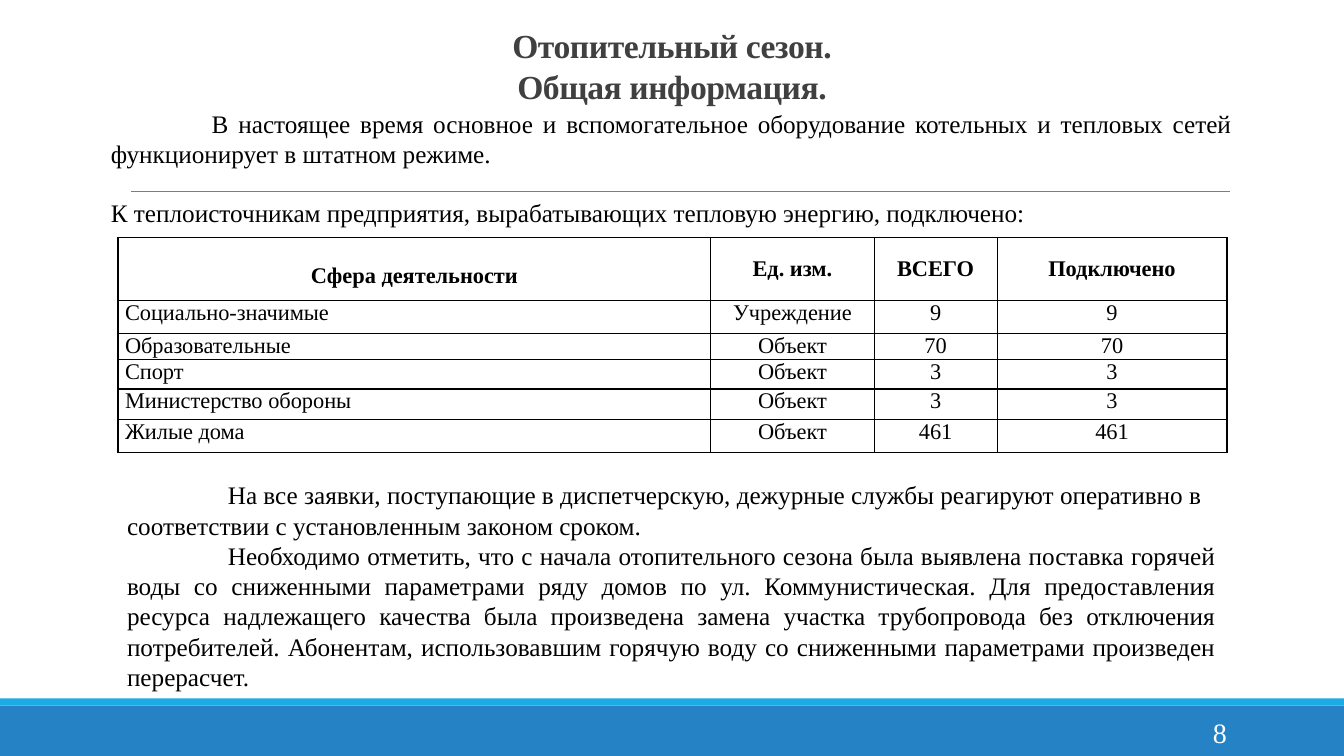
import dataclasses

import lxml.etree
import pptx
import pptx.dml.color
import pptx.enum.shapes
import pptx.enum.text
import pptx.oxml
import pptx.oxml.ns
import pptx.util

Inches = pptx.util.Inches
Pt = pptx.util.Pt
Align = pptx.enum.text.PP_ALIGN
Anchor = pptx.enum.text.MSO_ANCHOR

TITLE = "Отопительный сезон.\vОбщая информация."
PAGE_NUMBER = "8"

# Each paragraph: text, alignment, first-line indent in inches, space before in points
INTRODUCTION = [
    ("В настоящее время основное и вспомогательное оборудование котельных и тепловых сетей "
     "функционирует в штатном режиме.", Align.JUSTIFY, 1, 0),
    ("К теплоисточникам предприятия, вырабатывающих тепловую энергию, подключено:",
     Align.JUSTIFY, 0, 21),
]
CONCLUSION = [
    ("На все заявки, поступающие в диспетчерскую, дежурные службы реагируют оперативно в "
     "соответствии с установленным законом сроком.", Align.LEFT, 1, 0),
    ("Необходимо отметить, что с начала отопительного сезона была выявлена поставка горячей "
     "воды со сниженными параметрами ряду домов по ул. Коммунистическая. Для предоставления "
     "ресурса надлежащего качества была произведена замена участка трубопровода без отключения "
     "потребителей. Абонентам, использовавшим горячую воду со сниженными параметрами произведен "
     "перерасчет.", Align.JUSTIFY, 1, 0),
]

TABLE_ROWS = [
    ("Сфера деятельности", "Ед. изм.", "ВСЕГО", "Подключено"),
    ("Социально-значимые", "Учреждение", "9", "9"),
    ("Образовательные", "Объект", "70", "70"),
    ("Спорт", "Объект", "3", "3"),
    ("Министерство обороны", "Объект", "3", "3"),
    ("Жилые дома", "Объект", "461", "461"),
]
COLUMN_WIDTHS = (5.88, 1.62, 1.22, 2.28)
ROW_HEIGHTS = (0.62, 0.33, 0.26, 0.29, 0.3, 0.33)
TABLE_LEFT, TABLE_TOP = 1.17, 2.36

SLIDE_WIDTH, SLIDE_HEIGHT = 13.33, 7.5
FOOTER_TOP, STRIPE_TOP = 7, 6.93


@dataclasses.dataclass(frozen=True)
class Theme:
    font: str = "Times New Roman"
    title: str = "404040"
    text: str = "000000"
    light: str = "FFFFFF"
    footer: str = "2583C5"
    stripe: str = "1CACE3"
    rule: str = "7E7E7E"
    title_size: int = 24
    number_size: int = 20
    body_size: int = 18
    table_size: int = 16


THEME = Theme()


def rgb(value):
    return pptx.dml.color.RGBColor.from_string(value)


def apply_format(target, values):
    for name, value in values.items():
        setattr(target, name, value)


def format_font(font, size, color, bold=False):
    apply_format(font, {"name": THEME.font, "size": Pt(size), "bold": bold})
    font.color.rgb = rgb(color)


def place(shape, left, top, width, height):
    apply_format(shape, {"left": Inches(left), "top": Inches(top),
                         "width": Inches(width), "height": Inches(height)})


def format_frame(frame, left, top, right, bottom):
    apply_format(frame, {
        "margin_left": Inches(left), "margin_top": Inches(top),
        "margin_right": Inches(right), "margin_bottom": Inches(bottom),
        "word_wrap": True, "vertical_anchor": Anchor.TOP,
        "auto_size": pptx.enum.text.MSO_AUTO_SIZE.NONE})


def add_title(slide):
    title = slide.shapes.title
    place(title, 1, 0.15, 11.33, 0.91)
    format_frame(title.text_frame, 0, 0.1, 0, 0)
    title.text_frame.text = TITLE
    paragraph = title.text_frame.paragraphs[0]
    paragraph.alignment = Align.CENTER
    for run in paragraph.runs:
        format_font(run.font, THEME.title_size, THEME.title, bold=True)
        run.font._element.set("spc", "-30")


def fill_body(shape, paragraphs, box):
    place(shape, *box)
    frame = shape.text_frame
    format_frame(frame, 0.1, 0.05, 0.1, 0.05)
    for index, (text, alignment, indent, space_before) in enumerate(paragraphs):
        paragraph = frame.add_paragraph() if index else frame.paragraphs[0]
        run = paragraph.add_run()
        run.text = text
        format_font(run.font, THEME.body_size, THEME.text)
        apply_format(paragraph, {"alignment": alignment, "space_before": Pt(space_before)})
        properties = paragraph._p.get_or_add_pPr()
        properties.set("marL", "0")
        properties.set("indent", str(Inches(indent)))
        lxml.etree.SubElement(properties, pptx.oxml.ns.qn("a:buNone"))


def add_bar(slide, top, bottom, color):
    bar = slide.shapes.add_shape(
        pptx.enum.shapes.MSO_SHAPE.RECTANGLE, 0, Inches(top),
        Inches(SLIDE_WIDTH), Inches(bottom - top))
    bar.shadow.inherit = False
    bar.fill.solid()
    bar.fill.fore_color.rgb = rgb(color)
    bar.line.fill.background()


def add_rule(slide):
    rule = slide.shapes.add_connector(
        pptx.enum.shapes.MSO_CONNECTOR.STRAIGHT,
        Inches(1.3), Inches(1.9), Inches(12.2), Inches(1.9))
    rule.line.color.rgb = rgb(THEME.rule)
    rule.line.width = Pt(0.48)
    lxml.etree.SubElement(rule._element.spPr, pptx.oxml.ns.qn("a:effectLst"))


def add_page_number(slide):
    box = slide.shapes.add_textbox(Inches(12), Inches(7.11), Inches(0.5), Inches(0.34))
    format_frame(box.text_frame, 0.03, 0, 0, 0)
    paragraph = box.text_frame.paragraphs[0]
    paragraph.line_spacing = Pt(22.9)
    run = paragraph.add_run()
    run.text = PAGE_NUMBER
    format_font(run.font, THEME.number_size, THEME.light)


def set_borders(cell):
    """Draw a one-point line on all four sides; borders must precede the fill."""
    properties = cell._tc.get_or_add_tcPr()
    for position, side in enumerate(("lnL", "lnR", "lnT", "lnB")):
        properties.insert(position, pptx.oxml.parse_xml(
            f'<a:{side} {pptx.oxml.ns.nsdecls("a")} w="{Pt(1)}"><a:solidFill>'
            f'<a:srgbClr val="{THEME.text}"/></a:solidFill></a:{side}>'))


def add_connections_table(slide):
    table = slide.shapes.add_table(
        len(TABLE_ROWS), len(COLUMN_WIDTHS), Inches(TABLE_LEFT), Inches(TABLE_TOP),
        Inches(sum(COLUMN_WIDTHS)), Inches(sum(ROW_HEIGHTS))).table
    apply_format(table, {"first_row": False, "horz_banding": False})
    for column, width in zip(table.columns, COLUMN_WIDTHS):
        column.width = Inches(width)
    for row, height, texts in zip(table.rows, ROW_HEIGHTS, TABLE_ROWS):
        row.height = Inches(height)
        header = texts is TABLE_ROWS[0]
        for index, (cell, text) in enumerate(zip(row.cells, texts)):
            lowered = header and index == 0
            apply_format(cell, {
                "text": text, "margin_left": Inches(0.07), "margin_right": Inches(0.07),
                "margin_top": Inches(0.25 if lowered else 0), "margin_bottom": 0,
                "vertical_anchor": Anchor.MIDDLE if header and index else Anchor.TOP})
            cell.fill.background()
            set_borders(cell)
            paragraph = cell.text_frame.paragraphs[0]
            paragraph.alignment = Align.CENTER if header or index else Align.JUSTIFY
            format_font(paragraph.runs[0].font, THEME.table_size, THEME.text, bold=header)


def main():
    presentation = pptx.Presentation()
    apply_format(presentation, {"slide_width": Inches(SLIDE_WIDTH),
                                "slide_height": Inches(SLIDE_HEIGHT)})
    two_content = presentation.slide_layouts.get_by_name("Two Content")
    slide = presentation.slides.add_slide(two_content)
    add_title(slide)
    fill_body(slide.placeholders[1], INTRODUCTION, (1, 1.02, 11.32, 1.31))
    fill_body(slide.placeholders[2], CONCLUSION, (1.16, 4.71, 11, 2.22))
    add_bar(slide, FOOTER_TOP, SLIDE_HEIGHT, THEME.footer)
    add_bar(slide, STRIPE_TOP, FOOTER_TOP, THEME.stripe)
    add_rule(slide)
    add_page_number(slide)
    add_connections_table(slide)
    presentation.save("out.pptx")


if __name__ == "__main__":
    main()
